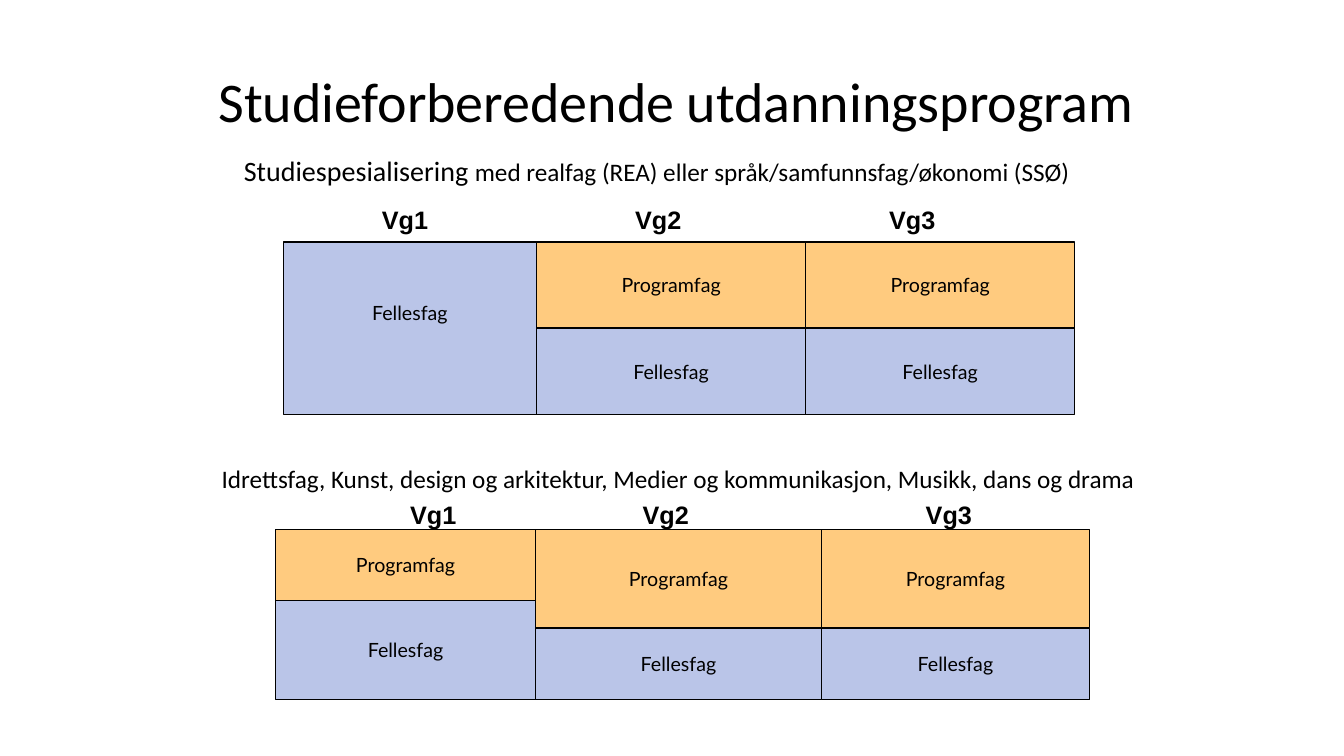
import pptx
import pptx.util
import pptx.dml.color
import pptx.enum.shapes
import pptx.enum.text
import pptx.oxml.ns
import lxml.etree

Inches = pptx.util.Inches
Pt = pptx.util.Pt
Align = pptx.enum.text.PP_ALIGN
Anchor = pptx.enum.text.MSO_ANCHOR
HUES = {"ink": "000000", "Programfag": "FF9900", "Fellesfag": "BAC5E8"}
ALPHA = {"Programfag": 50}


def shade(name):
    """Return the named colour."""
    return pptx.dml.color.RGBColor.from_string(HUES[name])


def write(para, text, size, face, bold=False):
    """Add one formatted run to a paragraph."""
    run = para.add_run()
    run.text = text
    run.font.size = Pt(size)
    run.font.name = face
    run.font.bold = bold
    run.font.color.rgb = shade("ink")


def title(slide, box, text):
    """Place the slide title in its placeholder."""
    head = slide.shapes.title
    head.left, head.top, head.width, head.height = map(Inches, box)
    frame = head.text_frame
    frame.vertical_anchor = Anchor.MIDDLE
    frame.paragraphs[0].alignment = Align.CENTER
    write(frame.paragraphs[0], text, 40, "Calibri")


def label(slide, box, runs, face, bold=False, wrap=True):
    """Place a line of text made of sized runs."""
    frame = slide.shapes.add_textbox(*map(Inches, box)).text_frame
    frame.word_wrap = wrap
    frame.vertical_anchor = Anchor.MIDDLE
    for text, size in runs:
        write(frame.paragraphs[0], text, size, face, bold)


def cell(slide, box, kind, line, lift):
    """Draw one subject block, its text raised by half of lift."""
    rect = slide.shapes.add_shape(
        pptx.enum.shapes.MSO_SHAPE.RECTANGLE, *map(Inches, box))
    rect.shadow.inherit = False
    rect.fill.solid()
    rect.fill.fore_color.rgb = shade(kind)
    if kind in ALPHA:
        tint = rect.fill._xPr.find(".//" + pptx.oxml.ns.qn("a:srgbClr"))
        lxml.etree.SubElement(tint, pptx.oxml.ns.qn("a:alpha"),
                              val=str(ALPHA[kind] * 1000))
    rect.line.color.rgb = shade("ink")
    rect.line.width = Pt(line)
    frame = rect.text_frame
    frame.word_wrap = True
    frame.vertical_anchor = Anchor.MIDDLE
    frame.margin_bottom = Inches(0.05 + lift)
    frame.paragraphs[0].alignment = Align.CENTER
    write(frame.paragraphs[0], kind, 14, "Lato")


def plan(slide, box, years, line, rise):
    """Draw three school years side by side, each split by its share."""
    left, top, width, height = box
    for year, (part, share, inset) in enumerate(years, 1):
        wide = width * part
        label(slide, (left + inset, top - rise, 0.66, 0.4),
              [(f"Vg{year}", 18)], "Arial", bold=True, wrap=False)
        split = height * share
        if share:
            cell(slide, (left, top, wide, split), "Programfag", line, 0)
        cell(slide, (left, top + split, wide, height - split),
             "Fellesfag", line, 0 if share else 0.3)
        left += wide


def main():
    """Build and save the slide."""
    deck = pptx.Presentation()
    deck.slide_width, deck.slide_height = Inches(13.33), Inches(7.5)
    slide = deck.slides.add_slide(deck.slide_layouts[5])
    title(slide, (1.94, 0.52, 9.53, 0.95),
          "Studieforberedende utdanningsprogram")
    label(slide, (2.32, 1.49, 9.23, 0.4),
          [("Studiespesialisering ", 20),
           ("med realfag (REA) eller språk/samfunnsfag/økonomi (SSØ)", 18)],
          "Calibri")
    plan(slide, (2.81, 2.4, 7.85, 1.71),
         [(0.32, 0, 0.88), (0.34, 0.5, 0.88), (0.34, 0.5, 0.73)], 1, 0.42)
    label(slide, (2.1, 4.55, 10.08, 0.4),
          [("Idrettsfag, Kunst, design og arkitektur, Medier og "
            "kommunikasjon, Musikk, dans og drama", 18)], "Calibri")
    plan(slide, (2.73, 5.25, 8.08, 1.69),
         [(0.32, 0.42, 1.24), (0.35, 0.58, 0.96), (0.33, 0.58, 0.94)],
         0.75, 0.35)
    deck.save("out.pptx")


if __name__ == "__main__":
    main()
